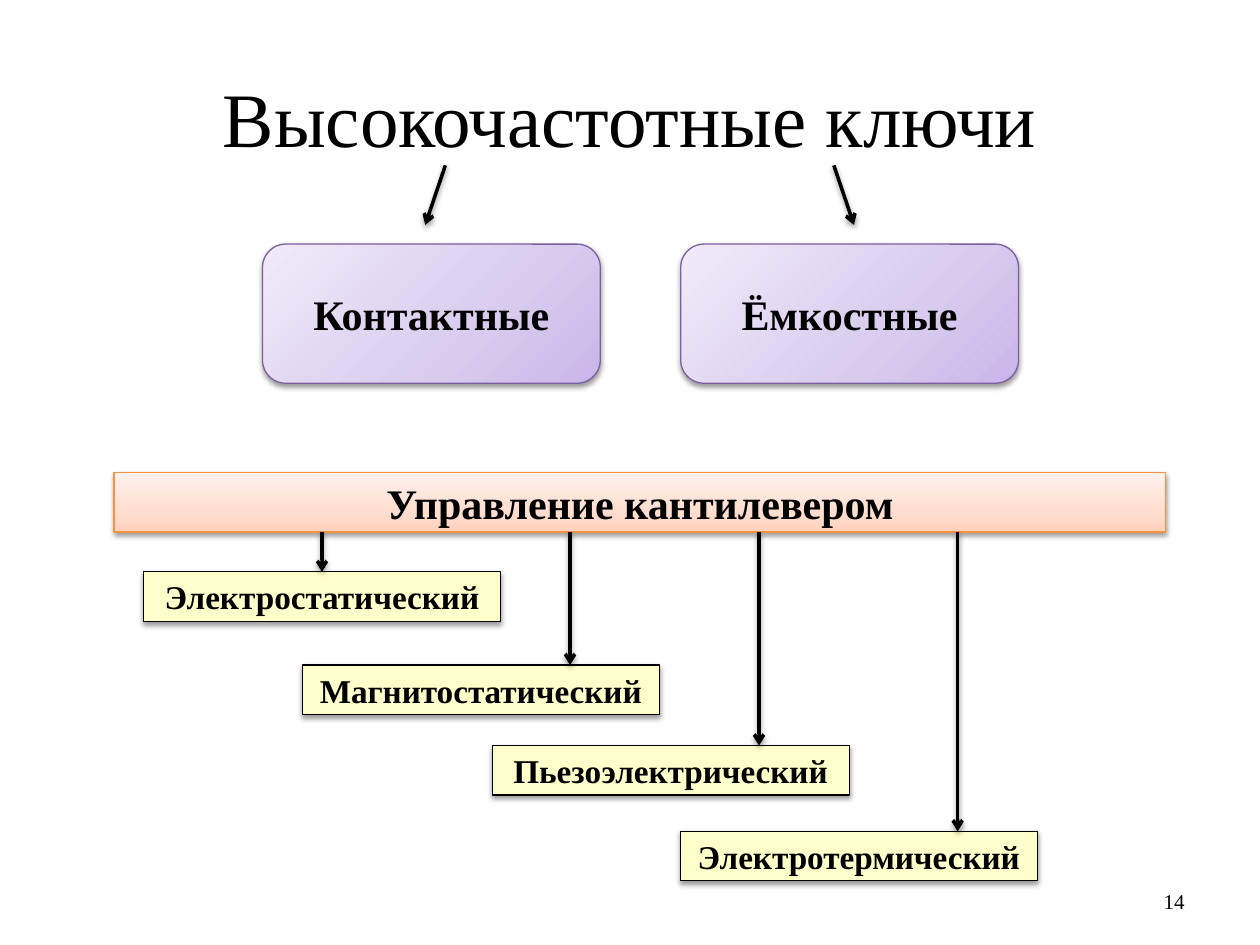
from collections import namedtuple
from dataclasses import dataclass

from lxml.etree import SubElement
from pptx import Presentation
from pptx.dml.color import RGBColor
from pptx.enum.shapes import MSO_CONNECTOR, MSO_SHAPE
from pptx.enum.text import MSO_ANCHOR, PP_ALIGN
from pptx.oxml.ns import qn
from pptx.util import Pt

Box = namedtuple("Box", "x y w h")


@dataclass(frozen=True)
class Theme:
    font: str = "Times New Roman"
    ink: str = "000000"
    key_fill: tuple = ("C9B5E8", "D8CBEE", "F0EAF9")
    key_line: str = "7D60A0"
    bar_fill: tuple = ("FFD2BD", "FFDED0", "FFF2ED")
    bar_line: str = "F69240"
    method_fill: str = "FFFFCC"
    title_size: float = 44
    head_size: float = 24
    method_size: float = 19
    number_size: float = 12
    outline: float = 0.75
    arrow: float = 2


THEME = Theme()


def rgb(value):
    return RGBColor.from_string(value)


def points(*values):
    return [Pt(v) for v in values]


def write(tf, text, size, bold=False, align=PP_ALIGN.CENTER):
    tf.word_wrap = True
    tf.vertical_anchor = MSO_ANCHOR.MIDDLE
    p = tf.paragraphs[0]
    p.alignment = align
    r = p.add_run()
    r.text = text
    r.font.name = THEME.font
    r.font.size = Pt(size)
    r.font.bold = bold
    r.font.color.rgb = rgb(THEME.ink)


def add_shadow(spPr):
    """Append a soft shadow falling straight down; call after fill and line are set."""
    effects = SubElement(spPr, qn("a:effectLst"))
    shadow = SubElement(effects, qn("a:outerShdw"), blurRad=str(Pt(3.1)),
                        dist=str(Pt(1.6)), dir="5400000", rotWithShape="0")
    color = SubElement(shadow, qn("a:srgbClr"), val="000000")
    SubElement(color, qn("a:alpha"), val="38000")


def fill_gradient(sp, colors, angle):
    sp.fill.gradient()
    grad = sp._element.spPr.find(qn("a:gradFill"))
    for child in list(grad):
        grad.remove(child)
    stops = SubElement(grad, qn("a:gsLst"))
    for pos, value in zip((0, 35, 100), colors):
        stop = SubElement(stops, qn("a:gs"), pos=str(pos * 1000))
        SubElement(stop, qn("a:srgbClr"), val=value)
    SubElement(grad, qn("a:lin"), ang=str(angle * 60000), scaled="0")


def add_panel(s, box, text, size, fill, line, angle=0, kind=MSO_SHAPE.RECTANGLE):
    """Add a shadowed shape; fill is one colour or a tuple of gradient colours."""
    sp = s.shapes.add_shape(kind, *points(*box))
    if isinstance(fill, tuple):
        fill_gradient(sp, fill, angle)
    else:
        sp.fill.solid()
        sp.fill.fore_color.rgb = rgb(fill)
    sp.line.color.rgb = rgb(line)
    sp.line.width = Pt(THEME.outline)
    add_shadow(sp._element.spPr)
    write(sp.text_frame, text, size, bold=True)
    return sp


def add_arrow(s, x1, y1, x2, y2, target=None):
    c = s.shapes.add_connector(MSO_CONNECTOR.STRAIGHT, *points(x1, y1, x2, y2))
    if target is not None:
        c.end_connect(target, 0)
    c.line.color.rgb = rgb(THEME.ink)
    c.line.width = Pt(THEME.arrow)
    SubElement(c.line._get_or_add_ln(), qn("a:tailEnd"), type="arrow")
    add_shadow(c._element.spPr)


def add_title(s, box, text):
    title = s.shapes.title
    title.left, title.top, title.width, title.height = points(*box)
    write(title.text_frame, text, THEME.title_size)


def add_key_types(s, box, names):
    """Two rounded boxes at the ends of the box, with arrows spreading towards them."""
    w = 193
    for i, name in enumerate(names):
        x = box.x + i * (box.w - w)
        add_panel(s, Box(x, box.y, w, box.h), name, THEME.head_size, THEME.key_fill,
                  THEME.key_line, 225, MSO_SHAPE.ROUNDED_RECTANGLE)
    middle = box.x + box.w / 2 - 0.5
    for side in (-1, 1):
        add_arrow(s, middle + side * 111, box.y - 45,
                  middle + side * 122.5, box.y - 11)


def add_control(s, box, heading, methods):
    """A heading bar with a staircase of methods: name, left, top, arrow position."""
    bar_h, w, h = 34, 204, 28.25
    add_panel(s, Box(box.x, box.y, box.w, bar_h), heading, THEME.head_size,
              THEME.bar_fill, THEME.bar_line, 270)
    for name, dx, dy, arrow in methods:
        x, y = box.x + dx, box.y + dy
        sp = add_panel(s, Box(x, y, w, h), name, THEME.method_size,
                       THEME.method_fill, THEME.ink)
        at_middle = arrow == w / 2
        add_arrow(s, x + arrow, box.y + bar_h, x + arrow, y,
                  sp if at_middle else None)


def add_page_number(s, box, text):
    tb = s.shapes.add_textbox(*points(*box))
    write(tb.text_frame, text, THEME.number_size, align=PP_ALIGN.RIGHT)


def main():
    prs = Presentation()
    prs.slide_width, prs.slide_height = points(720, 540)
    s = prs.slides.add_slide(prs.slide_layouts[5])
    add_title(s, Box(0, 21.6, 720, 90), "Высокочастотные ключи")
    add_key_types(s, Box(150, 139.5, 432, 79.5), ("Контактные", "Ёмкостные"))
    add_control(s, Box(65.25, 270, 601, 233.5), "Управление кантилевером", (
        ("Электростатический", 16.75, 56.75, 102),
        ("Магнитостатический", 107.5, 110, 153),
        ("Пьезоэлектрический", 216, 156, 152.5),
        ("Электротермический", 323.5, 205, 158.5),
    ))
    add_page_number(s, Box(516, 500.5, 168, 28.75), "14")
    prs.save("out.pptx")


if __name__ == "__main__":
    main()
